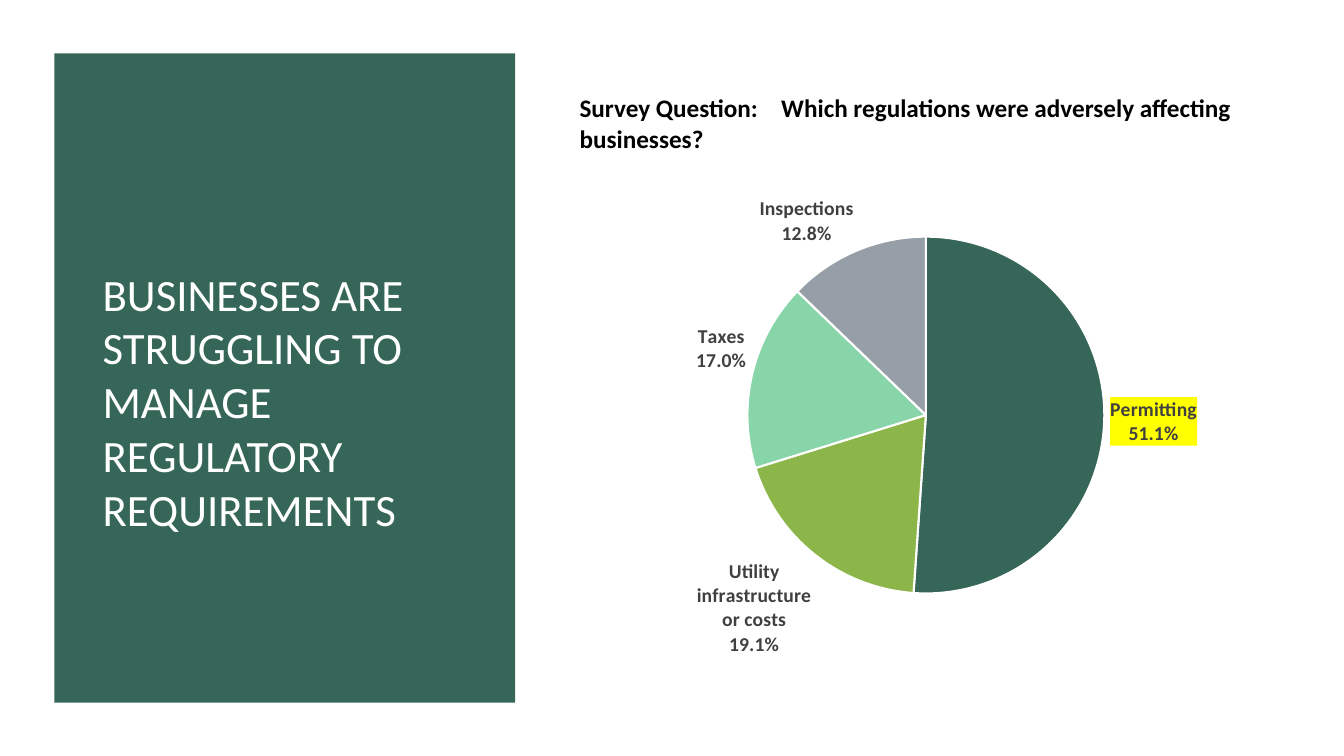
from lxml import etree
from pptx import Presentation, util as u
from pptx.chart.data import CategoryChartData
from pptx.dml.color import RGBColor
from pptx.enum import chart as charts, shapes, text
from pptx.oxml import parse_xml
from pptx.oxml.ns import nsdecls, qn

GREEN = RGBColor(0x36, 0x66, 0x58)
LIME = RGBColor(0x8C, 0xB6, 0x4A)
MINT = RGBColor(0x88, 0xD5, 0xA9)
GREY = RGBColor(0x96, 0x9F, 0xA7)
DARK = RGBColor(0x40, 0x40, 0x40)
BLACK = RGBColor(0, 0, 0)
WHITE = RGBColor(0xFF, 0xFF, 0xFF)
YELLOW = RGBColor(0xFF, 0xFF, 0)

REGULATIONS = [
    ("Permitting", 51.1, GREEN),
    ("Utility infrastructure or costs", 19.1, LIME),
    ("Taxes", 17, MINT),
    ("Inspections", 12.8, GREY),
]


def set_font(font, size, color, bold=False, name="Calibri"):
    font.name = name
    font.size = u.Pt(size)
    font.bold = bold
    font.color.rgb = color


def write(tf, content, size=18, color=BLACK, bold=False, tab=None,
          anchor=text.MSO_ANCHOR.TOP):
    tf.word_wrap = True
    tf.vertical_anchor = anchor
    p = tf.paragraphs[0]
    p.alignment = text.PP_ALIGN.LEFT
    if tab:
        tabs = etree.SubElement(p._p.get_or_add_pPr(), qn("a:tabLst"))
        etree.SubElement(tabs, qn("a:tab"), pos=str(u.Inches(tab)), algn="l")
    r = p.add_run()
    r.text = content
    set_font(r.font, size, color, bold)


def set_flag(labels, tag, value):
    labels.find(qn(tag)).set("val", value)


class SlideBuilder:
    def __init__(self, s, font="Calibri"):
        self.s = s
        self.font = font

    def box(self, x, y, w, h):
        return [u.Inches(v) for v in (x, y, w, h)]

    def panel(self, *at, fill):
        sp = self.s.shapes.add_shape(shapes.MSO_SHAPE.RECTANGLE, *self.box(*at))
        sp.shadow.inherit = False
        sp.fill.solid()
        sp.fill.fore_color.rgb = fill
        sp.line.fill.background()
        return sp

    def label(self, *at, content, **style):
        sp = self.s.shapes.add_textbox(*self.box(*at))
        write(sp.text_frame, content, **style)

    def pie(self, *at, rows, plot_area, highlight):
        data = CategoryChartData()
        data.categories = [name for name, _, _ in rows]
        data.add_series("Series 1", [value for _, value, _ in rows])
        chart = self.s.shapes.add_chart(
            charts.XL_CHART_TYPE.PIE, *self.box(*at), data).chart
        chart.has_legend = False
        chart.has_title = False
        set_font(chart.font, 10, BLACK, True, self.font)
        plot = chart.plots[0]
        plot.vary_by_categories = True
        series = plot.series[0]
        for i, (_, _, color) in enumerate(rows):
            fmt = series.points[i].format
            fmt.fill.solid()
            fmt.fill.fore_color.rgb = color
            fmt.line.color.rgb = WHITE
            fmt.line.width = u.Pt(1.5)
        self.pie_labels(series, highlight)
        self.place_plot(chart, plot_area)

    def pie_labels(self, series, highlight):
        labels = series.data_labels
        labels.number_format = "0.0%"
        labels.number_format_is_linked = False
        first = series.points[0].data_label
        for item in (labels, first):
            set_font(item.font, 14, DARK, True, self.font)
            item.position = charts.XL_LABEL_POSITION.OUTSIDE_END
        group = series._element.find(qn("c:dLbls"))
        point = group.find(qn("c:dLbl"))
        for node in (group, point):
            set_flag(node, "c:showVal", "0")
            set_flag(node, "c:showCatName", "1")
            set_flag(node, "c:showPercent", "1")
            separator = etree.Element(qn("c:separator"))
            separator.text = "\n"
            node.find(qn("c:showBubbleSize")).addnext(separator)
        txpr = point.find(qn("c:txPr"))
        txpr.addprevious(parse_xml(
            f'<c:numFmt {nsdecls("c")} formatCode="0.0%" sourceLinked="0"/>'))
        txpr.addprevious(parse_xml(
            f'<c:spPr {nsdecls("c", "a")}><a:solidFill>'
            f'<a:srgbClr val="{highlight}"/></a:solidFill></c:spPr>'))

    def place_plot(self, chart, plot_area):
        area = chart._chartSpace.chart.plotArea
        for old in area.findall(qn("c:layout")):
            area.remove(old)
        layout = etree.Element(qn("c:layout"))
        manual = etree.SubElement(layout, qn("c:manualLayout"))
        settings = [("layoutTarget", "inner"), ("xMode", "edge"), ("yMode", "edge")]
        settings += zip("xywh", plot_area)
        for tag, value in settings:
            etree.SubElement(manual, qn(f"c:{tag}"), val=str(value))
        area.insert(0, layout)


def main():
    prs = Presentation()
    prs.slide_width = u.Inches(13.33)
    prs.slide_height = u.Inches(7.5)
    slide = SlideBuilder(prs.slides.add_slide(prs.slide_layouts[6]))
    slide.panel(0.54, 0.53, 4.57, 6.44, fill=GREEN)
    slide.label(0.92, 1.22, 3.86, 5.51, size=32, color=WHITE,
                content="BUSINESSES ARE STRUGGLING TO MANAGE REGULATORY REQUIREMENTS",
                anchor=text.MSO_ANCHOR.MIDDLE)
    question = slide.panel(5.65, 0.87, 6.95, 0.71, fill=WHITE)
    write(question.text_frame, bold=True, tab=2,
          content="Survey Question:\tWhich regulations were adversely affecting businesses?")
    slide.pie(5.81, 1.74, 6.68, 5.06, rows=REGULATIONS,
              plot_area=(0.24, 0.11, 0.53, 0.72), highlight=YELLOW)
    prs.save("out.pptx")


if __name__ == "__main__":
    main()
